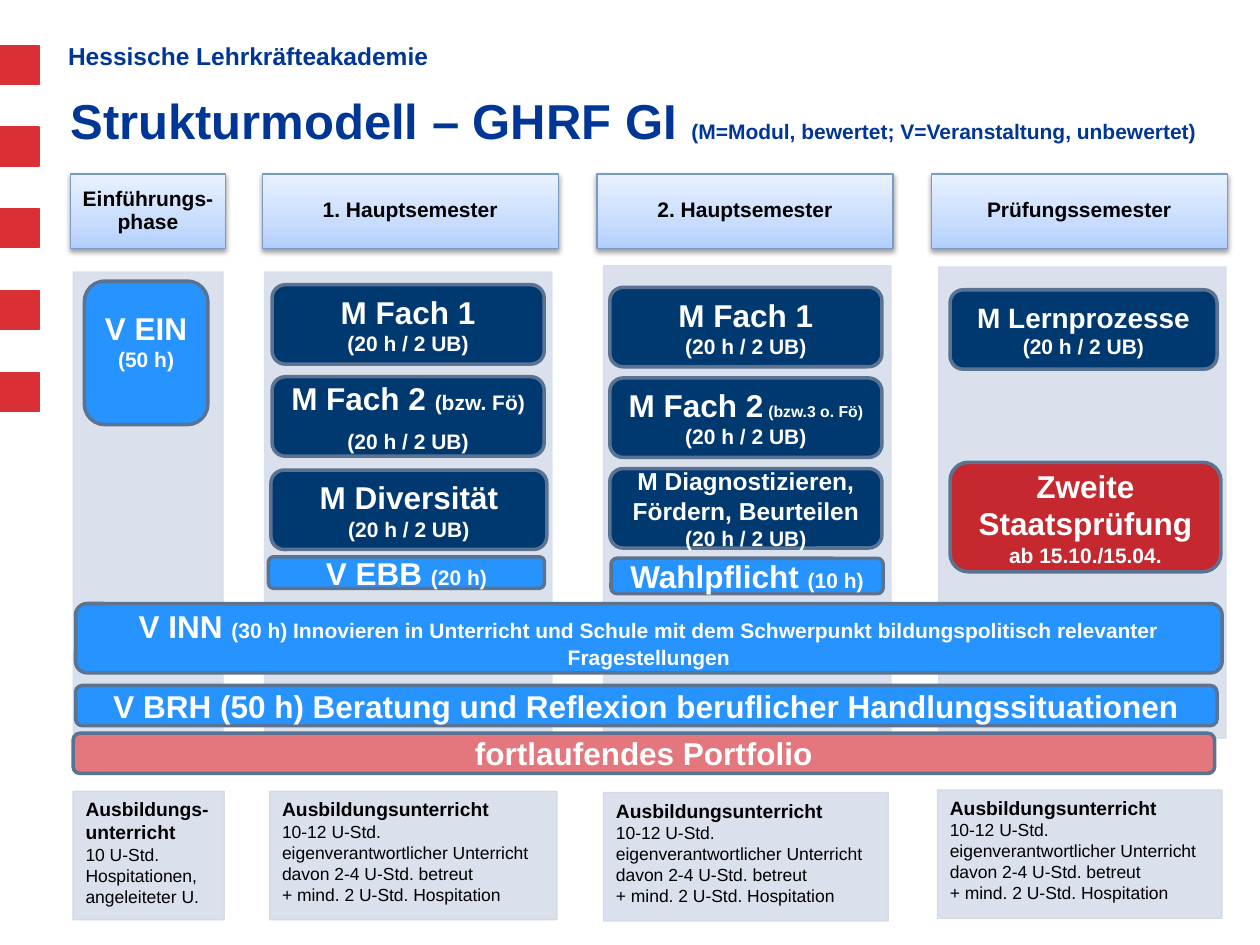
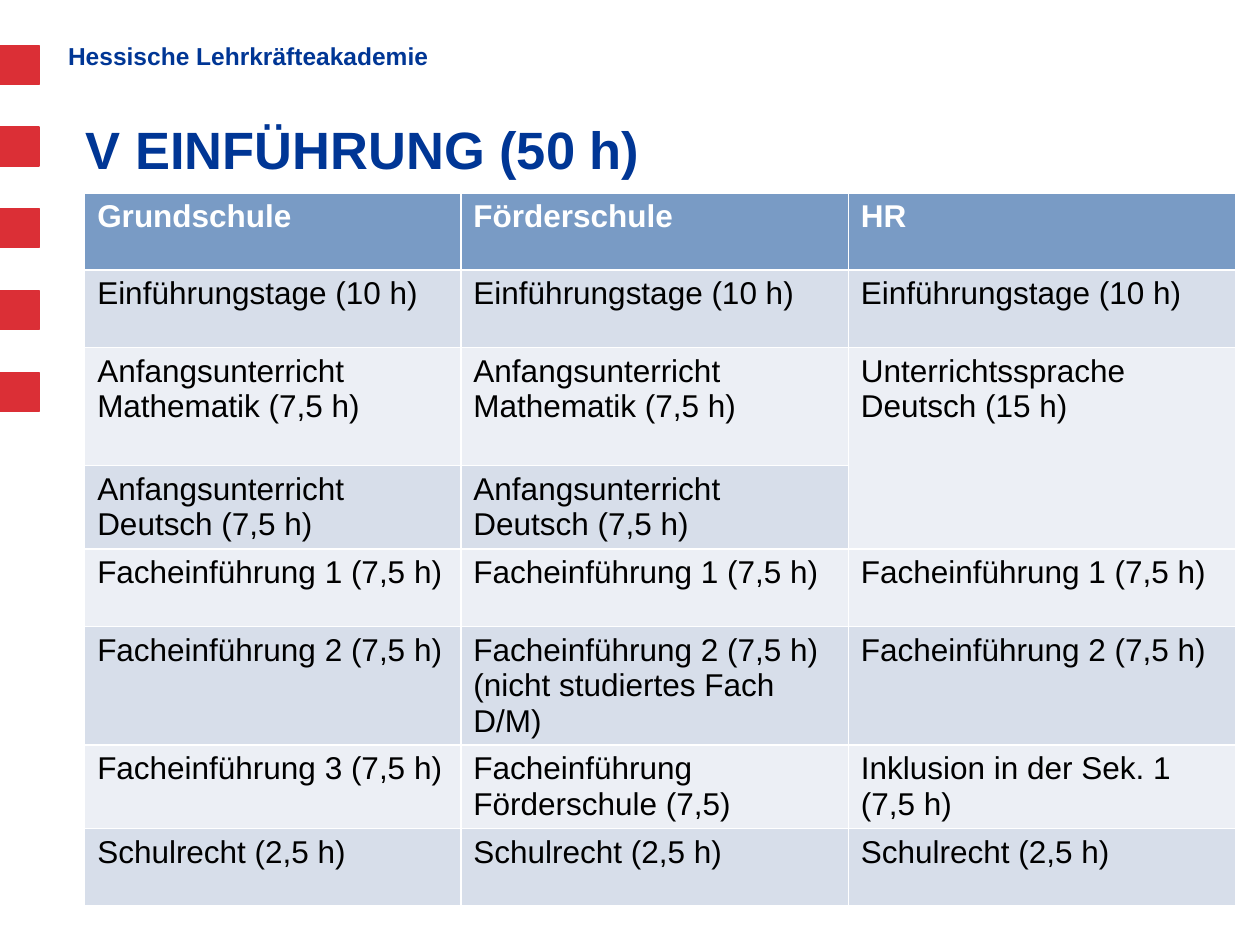
"""Build two slides on the structure of teacher training and its introductory course."""
from copy import deepcopy
from dataclasses import dataclass

from lxml import etree
from pptx import Presentation
from pptx.dml import color
from pptx.enum import shapes, text
from pptx.oxml import ns
from pptx.util import Pt

FONT = "Arial"
BLUE, RED, WHITE, BLACK = "003695", "DB2F36", "FFFFFF", "000000"
NAVY, SKY, CRIMSON, ROSE = "003870", "2693FF", "C62830", "E4777D"
OUTLINE, STEEL, MIST, PALE, MIST_EDGE = "5A7392", "799BC5", "D7DEEA", "ECEFF5", "D2D9E5"
GRADIENT = ((0, "B1CFFE"), (35, "C8DDFD"), (100, "E9F1FF"))
RECT, ROUND = shapes.MSO_SHAPE.RECTANGLE, shapes.MSO_SHAPE.ROUNDED_RECTANGLE
LEFT, CENTER = text.PP_ALIGN.LEFT, text.PP_ALIGN.CENTER
TOP, MIDDLE, BOTTOM = text.MSO_ANCHOR.TOP, text.MSO_ANCHOR.MIDDLE, text.MSO_ANCHOR.BOTTOM


@dataclass(frozen=True)
class Box:
    left: float
    top: float
    width: float
    height: float


@dataclass(frozen=True)
class Line:
    runs: tuple[tuple[str, float], ...]
    bold: bool = True
    before: float = 0


@dataclass(frozen=True)
class Module:
    box: Box
    lines: tuple[Line, ...]
    fill: str = NAVY
    bottom: float = 3.6


@dataclass(frozen=True)
class Phase:
    name: str
    header: Box
    column: Box
    teaching: Box
    lessons: tuple[Line, ...]


def line(words: str, size: float, bold: bool = True) -> Line:
    return Line(((words, size),), bold)


def lessons(heading: str, *details: str) -> tuple[Line, ...]:
    return (line(heading, 11), *(line(detail, 10, False) for detail in details))


def place(box: Box) -> tuple[Pt, Pt, Pt, Pt]:
    return Pt(box.left), Pt(box.top), Pt(box.width), Pt(box.height)


def rgb(code: str) -> color.RGBColor:
    return color.RGBColor.from_string(code)


def write(frame, lines: tuple[Line, ...], ink: str, align=CENTER, anchor=MIDDLE,
          insets=(7.2, 3.6, 7.2, 3.6), spacing: float = 1.0) -> None:
    frame.word_wrap = True
    frame.auto_size = text.MSO_AUTO_SIZE.NONE
    frame.vertical_anchor = anchor
    frame.margin_left, frame.margin_top, frame.margin_right, frame.margin_bottom = map(Pt, insets)
    for index, entry in enumerate(lines):
        paragraph = frame.add_paragraph() if index else frame.paragraphs[0]
        paragraph.alignment = align
        paragraph.line_spacing = spacing
        if entry.before:
            paragraph.space_before = Pt(entry.before)
        font = paragraph.font
        font.name, font.bold, font.color.rgb = FONT, entry.bold, rgb(ink)
        base = entry.runs[0][1]
        font.size = Pt(base)
        for words, size in entry.runs:
            run = paragraph.add_run()
            run.text = words
            if size != base:
                run.font.size = Pt(size)


def block(slide, kind, box: Box, fill: str, edge: str, weight: float = 0.75, alpha: int = 100):
    shape = slide.shapes.add_shape(kind, *place(box))
    shape.shadow.inherit = False
    shape.fill.solid()
    shape.fill.fore_color.rgb = rgb(fill)
    shape.line.color.rgb = rgb(edge)
    shape.line.width = Pt(weight)
    if alpha < 100:
        for tone in shape._element.spPr.iter(ns.qn("a:srgbClr")):
            etree.SubElement(tone, ns.qn("a:alpha"), val=str(alpha * 1000))
    return shape


def shade(shape) -> None:
    shape.fill.gradient()
    shape.fill.gradient_angle = 90
    stop_list = next(shape._element.spPr.iter(ns.qn("a:gsLst")))
    stop_list.insert(1, deepcopy(stop_list[0]))
    for stop, (position, code) in zip(shape.fill.gradient_stops, GRADIENT):
        stop.position = position / 100
        stop.color.rgb = rgb(code)


def cast_shadow(shape) -> None:
    effects = shape._element.spPr.find(ns.qn("a:effectLst"))
    shadow = etree.SubElement(effects, ns.qn("a:outerShdw"), blurRad=str(Pt(3.1)),
                              dist=str(Pt(1.6)), dir="5400000", rotWithShape="0")
    tone = etree.SubElement(shadow, ns.qn("a:srgbClr"), val=BLACK)
    etree.SubElement(tone, ns.qn("a:alpha"), val="38000")


def start_slide(deck, title_box: Box, title_line: Line):
    slide = deck.slides.add_slide(deck.slide_layouts[5])
    for step in range(5):
        block(slide, RECT, Box(0, 25.9 + 46.7 * step, 22.3, 22.3), RED, RED)
    academy = slide.shapes.add_textbox(*place(Box(38.9, 21.6, 578.2, 22.3)))
    write(academy.text_frame, (line("Hessische Lehrkräfteakademie", 14),), BLUE,
          LEFT, TOP, (0, 3.6, 0, 3.6), 0.9)
    title = slide.shapes.title
    title.left, title.top, title.width, title.height = place(title_box)
    write(title.text_frame, (title_line,), BLUE, LEFT, BOTTOM, (7.2, 0, 7.2, 0))
    return slide


def draw_phase(slide, phase: Phase) -> None:
    header = block(slide, RECT, phase.header, PALE, STEEL)
    shade(header)
    cast_shadow(header)
    write(header.text_frame, (line(phase.name, 12),), BLACK,
          insets=(6.5, 3.6, 6.5, 3.6), spacing=0.9)
    block(slide, RECT, phase.column, MIST, MIST, alpha=90)
    teaching = block(slide, RECT, phase.teaching, MIST, MIST_EDGE, alpha=90)
    write(teaching.text_frame, phase.lessons, BLACK, LEFT, TOP)


def draw_module(slide, module: Module) -> None:
    shape = block(slide, ROUND, module.box, module.fill, OUTLINE, 2)
    write(shape.text_frame, module.lines, WHITE, insets=(7.2, 3.6, 7.2, module.bottom))


HOURS = line("(20 h / 2 UB)", 12)
FACH_1 = (line("M Fach 1", 18), HOURS)
MAIN_LESSONS = lessons("Ausbildungsunterricht", "10-12 U-Std. eigenverantwortlicher Unterricht",
                       "davon 2-4 U-Std. betreut", "+ mind. 2 U-Std. Hospitation")
INTRO_LESSONS = lessons("Ausbildungs- unterricht", "10 U-Std. Hospitationen, angeleiteter U.")

PHASES = (
    Phase("Einführungs-phase", Box(40.3, 99.4, 88.6, 42.5), Box(41.8, 155.5, 85.7, 269.3),
          Box(41.8, 452.2, 86.4, 73.4), INTRO_LESSONS),
    Phase("1. Hauptsemester", Box(149.8, 99.4, 169.2, 42.5), Box(151.2, 155.5, 164.2, 269.3),
          Box(154.1, 452.2, 164.2, 73.4), MAIN_LESSONS),
    Phase("2. Hauptsemester", Box(341.1, 99.4, 169.2, 42.5), Box(344.9, 151.9, 164.2, 267.1),
          Box(344.9, 452.9, 162.7, 73.4), MAIN_LESSONS),
    Phase("Prüfungssemester", Box(532.1, 99.4, 169.2, 42.5), Box(536.4, 152.6, 164.2, 269.3),
          Box(535.7, 451.4, 162.7, 73.4), MAIN_LESSONS),
)

MODULES = (
    Module(Box(155.5, 162.7, 155.5, 45.4), FACH_1),
    Module(Box(155.5, 215.3, 155.5, 45.4),
           (Line((("M Fach 2 ", 18), ("(bzw. Fö)", 12))), Line(HOURS.runs, before=7))),
    Module(Box(154.8, 268.6, 157.7, 45.4), (line("M Diversität", 18), HOURS)),
    Module(Box(348.5, 267.8, 155.5, 45.4),
           (line("M Diagnostizieren, Fördern, Beurteilen", 14), HOURS)),
    Module(Box(542.9, 165.6, 152.6, 45.4), (line("M Lernprozesse", 16), HOURS)),
    Module(Box(542.9, 264.2, 154.8, 62.6),
           (line("Zweite Staatsprüfung", 18), line("ab 15.10./15.04.", 12)), CRIMSON),
    Module(Box(153.4, 318.2, 157.7, 18), (Line((("V EBB ", 18), ("(20 h)", 12))),), SKY),
    Module(Box(43.2, 344.9, 655.2, 39.6),
           (Line((("V INN ", 18),
                  ("(30 h) Innovieren in Unterricht und Schule mit dem Schwerpunkt "
                   "bildungspolitisch relevanter Fragestellungen", 12))),), SKY),
    Module(Box(43.2, 391.7, 652.3, 23),
           (line("V BRH (50 h) Beratung und Reflexion beruflicher Handlungssituationen", 18),),
           SKY),
    Module(Box(41.8, 419, 652.3, 23), (line("fortlaufendes Portfolio", 18),), ROSE),
    Module(Box(48.2, 160.6, 70.6, 82.1), (line("V EIN", 18), line("(50 h)", 12)), SKY, 17.4),
    Module(Box(348.5, 164.2, 155.5, 45.4), FACH_1),
    Module(Box(348.5, 216, 155.5, 45.4),
           (Line((("M Fach 2", 18), (" ", 10), ("(bzw.3 o. Fö)", 9))), HOURS)),
    Module(Box(349.2, 319, 155.5, 20.2), (Line((("Wahlpflicht ", 18), ("(10 h)", 12))),), SKY),
)

COURSES = (
    ("Grundschule", "Förderschule", "HR"),
    ("Einführungstage (10 h)",) * 3,
    ("Anfangsunterricht Mathematik (7,5 h)",) * 2 + ("Unterrichtssprache Deutsch (15 h)",),
    ("Anfangsunterricht Deutsch (7,5 h)",) * 2 + ("",),
    ("Facheinführung 1 (7,5 h)",) * 3,
    ("Facheinführung 2 (7,5 h)", "Facheinführung 2 (7,5 h)\n(nicht studiertes Fach D/M)",
     "Facheinführung 2 (7,5 h)"),
    ("Facheinführung 3 (7,5 h)", "Facheinführung Förderschule (7,5)",
     "Inklusion in der Sek. 1 (7,5 h)"),
    ("Schulrecht (2,5 h)",) * 3,
)
COLUMN_WIDTHS = (215, 221.4, 221.4)
ROW_HEIGHTS = (44, 44.5, 67.4, 47.4, 44.5, 67.4, 47.4, 44.5)


def build_structure(deck) -> None:
    title = Line((("Strukturmodell – GHRF GI", 28), (" ", 30),
                  ("(M=Modul, bewertet; V=Veranstaltung, unbewertet)", 12)))
    slide = start_slide(deck, Box(33.1, 41, 663.8, 44.6), title)
    for phase in PHASES:
        draw_phase(slide, phase)
    for module in MODULES:
        draw_module(slide, module)


def build_introduction(deck) -> None:
    slide = start_slide(deck, Box(41.8, 54.7, 663.8, 48.2), line("V EINFÜHRUNG (50 h)", 30))
    area = Box(48.4, 110.2, sum(COLUMN_WIDTHS), sum(ROW_HEIGHTS))
    courses = slide.shapes.add_table(len(COURSES), len(COLUMN_WIDTHS), *place(area)).table
    for column, width in zip(courses.columns, COLUMN_WIDTHS):
        column.width = Pt(width)
    for row, height in zip(courses.rows, ROW_HEIGHTS):
        row.height = Pt(height)
    courses.cell(2, 2).merge(courses.cell(3, 2))
    for row_index, row in enumerate(COURSES):
        heading = row_index == 0
        fill = STEEL if heading else (PALE, MIST)[row_index % 2]
        for column_index, course in enumerate(row):
            cell = courses.cell(row_index, column_index)
            cell.fill.solid()
            cell.fill.fore_color.rgb = rgb(fill)
            if not course:
                continue
            for index, words in enumerate(course.split("\n")):
                frame = cell.text_frame
                paragraph = frame.add_paragraph() if index else frame.paragraphs[0]
                paragraph.text = words
                font = paragraph.font
                font.name, font.size, font.bold = FONT, Pt(18), heading
                font.color.rgb = rgb(WHITE if heading else BLACK)


def main() -> None:
    deck = Presentation()
    deck.slide_width, deck.slide_height = Pt(720), Pt(540)
    build_structure(deck)
    build_introduction(deck)
    deck.save("out.pptx")


if __name__ == "__main__":
    main()
